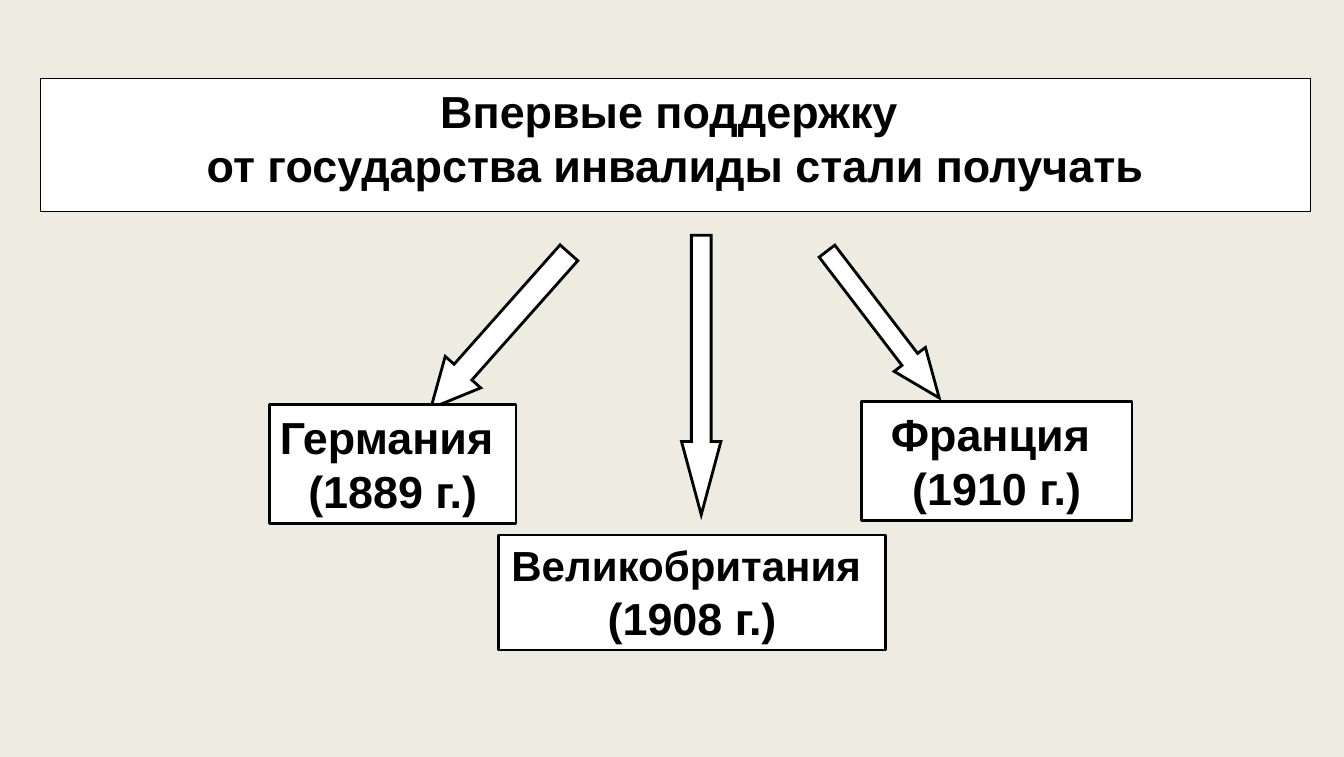
from dataclasses import dataclass

from lxml.etree import SubElement
from pptx import Presentation
from pptx.dml.color import RGBColor as RGB
from pptx.enum.shapes import MSO_SHAPE as SHAPE
from pptx.enum.text import MSO_ANCHOR as ANCHOR, MSO_AUTO_SIZE as FIT, PP_ALIGN as ALIGN
from pptx.oxml.ns import qn
from pptx.util import Inches, Pt


@dataclass(frozen=True)
class Theme:
    """Colours, font, type sizes and line widths."""
    paper: RGB = RGB(0xEE, 0xEC, 0xE1)
    fill: RGB = RGB(0xFF, 0xFF, 0xFF)
    ink: RGB = RGB(0, 0, 0)
    font: str = "Arial"
    large: int = 32
    small: int = 30
    thin: float = 0.75
    thick: float = 2


class Board:
    """Places styled elements on one slide, in percent of its size."""

    def __init__(self, prs, theme):
        """Add a title-only slide with the theme's background."""
        self.prs, self.theme = prs, theme
        self.slide = prs.slides.add_slide(prs.slide_layouts[5])
        bg = self.slide.background.fill
        bg.solid()
        bg.fore_color.rgb = theme.paper

    def place(self, at):
        """Turn percent shares into slide lengths."""
        sides = (self.prs.slide_width, self.prs.slide_height) * 2
        return [round(side * share / 100) for side, share in zip(sides, at)]

    def paint(self, sp, width):
        """Give a shape its fill and outline."""
        sp.fill.solid()
        sp.fill.fore_color.rgb = self.theme.fill
        sp.line.color.rgb = self.theme.ink
        sp.line.width = Pt(width)

    def label(self, sp, lines):
        """Set centred bold lines, each a pair of text and size."""
        tf = sp.text_frame
        frame = {"word_wrap": True, "auto_size": FIT.NONE, "vertical_anchor": ANCHOR.TOP}
        for name, value in frame.items():
            setattr(tf, name, value)
        p = tf.paragraphs[0]
        p.alignment = ALIGN.CENTER
        for i, (text, size) in enumerate(lines):
            if i:
                p.add_line_break()
            r = p.add_run()
            r.text = text
            style = {"name": self.theme.font, "size": Pt(size), "bold": True}
            for name, value in style.items():
                setattr(r.font, name, value)
            r.font.color.rgb = self.theme.ink

    def shape(self, kind, at):
        """Add a preset shape with a thick outline and no shadow."""
        sp = self.slide.shapes.add_shape(kind, *self.place(at))
        sp.shadow.inherit = False
        self.paint(sp, self.theme.thick)
        return sp

    def title(self, at, lines):
        """Move and format the title placeholder."""
        sp = self.slide.shapes.title
        sp.left, sp.top, sp.width, sp.height = self.place(at)
        self.paint(sp, self.theme.thin)
        self.label(sp, lines)

    def arrow(self, at, angle, head):
        """Add a turned block arrow with sharp corners."""
        sp = self.shape(SHAPE.RIGHT_ARROW, at)
        sp.rotation = angle
        sp.adjustments[1] = head
        ln = sp._element.spPr.find(qn("a:ln"))
        SubElement(ln, qn("a:miter"), lim="800000")

    def box(self, at, lines):
        """Add a rectangle with text."""
        self.label(self.shape(SHAPE.RECTANGLE, at), lines)


def main():
    """Build the slide on the first countries to support disabled people."""
    prs = Presentation()
    prs.slide_width, prs.slide_height = Inches(13.31), Inches(7.5)
    theme = Theme()
    board = Board(prs, theme)
    board.title((3, 10.4, 94.5, 17.6), [
        ("Впервые поддержку ", theme.large),
        ("от государства инвалиды стали получать", theme.large),
    ])
    countries = [
        ("Великобритания ", "(1908 г.)", theme.small, (37.11, 70.67, 28.78, 15.2),
         (41.77, 46.93, 20.81, 5.2), 90, 1.86),
        ("Германия ", "(1889 г.)", theme.large, (20.06, 53.47, 18.33, 15.73),
         (29.45, 40.53, 15.48, 6.27), 131.6, 1.02),
        ("Франция ", "(1910 г.)", theme.large, (64.09, 53.07, 20.14, 15.73),
         (58.83, 40.27, 13.75, 5.2), 52.6, 1.23),
    ]
    for name, year, size, box_at, arrow_at, angle, head in countries:
        board.arrow(arrow_at, angle, head)
        board.box(box_at, [(name, size), (year, theme.large)])
    prs.save("out.pptx")


if __name__ == "__main__":
    main()
